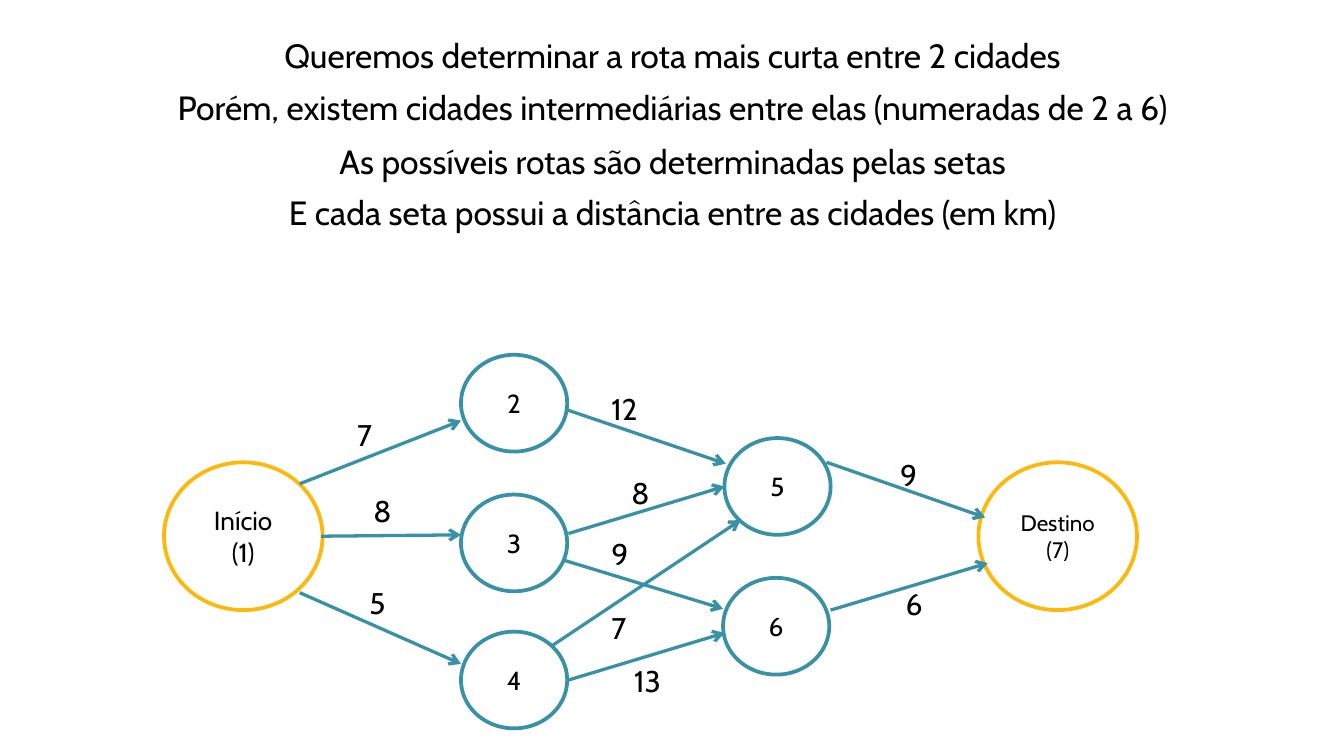
import pptx
import pptx.util
import pptx.dml.color
import pptx.enum.shapes
import pptx.enum.text
import pptx.oxml.ns
import lxml.etree
from pptx.util import Inches

FONT = "Cabin"
BLACK = "000000"
TEAL = "3891A7"
YELLOW = "FEB80A"

SENTENCES = [
    (0.21, "Queremos determinar a rota mais curta entre 2 cidades"),
    (0.6, "Porém, existem cidades intermediárias entre elas (numeradas de 2 a 6)"),
    (1, "As possíveis rotas são determinadas pelas setas"),
    (1.38, "E cada seta possui a distância entre as cidades (em km)"),
]

END_CITIES = [
    (1.22, "Início\n(1)", 14),
    (7.28, "Destino\n(7)", 12),
]

MIDDLE_CITIES = [
    ("2", 3.43, 2.64),
    ("3", 3.43, 3.68),
    ("4", 3.43, 4.7),
    ("5", 5.39, 3.26),
    ("6", 5.38, 4.3),
]

# start, end, distance, label position
ROUTES = [
    ((2.23, 3.6), (3.43, 3.13), "7", (2.56, 3.05)),
    ((2.39, 3.99), (3.43, 3.98), "8", (2.68, 3.62)),
    ((2.23, 4.41), (3.43, 4.94), "5", (2.65, 4.3)),
    ((4.22, 3.05), (5.4, 3.45), "12", (4.45, 2.86)),
    ((4.23, 3.97), (5.39, 3.62), "8", (4.6, 3.48)),
    ((4.2, 4.17), (5.38, 4.53), "9", (4.45, 3.94)),
    ((4.1, 4.81), (5.51, 3.87), "7", (4.45, 4.49)),
    ((4.23, 5.06), (5.39, 4.71), "13", (4.62, 4.88)),
    ((6.15, 3.44), (7.33, 3.85), "9", (6.6, 3.35)),
    ((6.18, 4.54), (7.35, 4.19), "6", (6.64, 4.31)),
]


def color(value):
    return pptx.dml.color.RGBColor.from_string(value)


def write_text(shape, text, size, alignment):
    text_frame = shape.text_frame
    text_frame.text = text
    text_frame.word_wrap = True
    for paragraph in text_frame.paragraphs:
        paragraph.alignment = alignment
        for run in paragraph.runs:
            run.font.name = FONT
            run.font.size = pptx.util.Pt(size)
            run.font.color.rgb = color(BLACK)


def add_text(slide, text, left, top, width, height, size, alignment):
    box = slide.shapes.add_textbox(
        Inches(left), Inches(top), Inches(width), Inches(height)
    )
    write_text(box, text, size, alignment)
    box.text_frame.auto_size = pptx.enum.text.MSO_AUTO_SIZE.SHAPE_TO_FIT_TEXT


def add_city(slide, text, left, top, width, height, outline, size):
    city = slide.shapes.add_shape(
        pptx.enum.shapes.MSO_SHAPE.OVAL,
        Inches(left), Inches(top), Inches(width), Inches(height),
    )
    city.shadow.inherit = False
    city.fill.background()
    city.line.color.rgb = color(outline)
    city.line.width = pptx.util.Pt(2)
    write_text(city, text, size, pptx.enum.text.PP_ALIGN.CENTER)
    city.text_frame.vertical_anchor = pptx.enum.text.MSO_ANCHOR.MIDDLE


def add_arrow(slide, start, end):
    arrow = slide.shapes.add_connector(
        pptx.enum.shapes.MSO_CONNECTOR.STRAIGHT,
        *[Inches(length) for length in start + end],
    )
    arrow.line.color.rgb = color(TEAL)
    arrow.line.width = pptx.util.Pt(1.75)
    qualified_name = pptx.oxml.ns.qn
    line = arrow.line._get_or_add_ln()
    lxml.etree.SubElement(line, qualified_name("a:tailEnd"), type="arrow")
    properties = arrow._element.spPr
    lxml.etree.SubElement(properties, qualified_name("a:effectLst"))


def main():
    presentation = pptx.Presentation()
    presentation.slide_width = Inches(10)
    presentation.slide_height = Inches(10) * 9 // 16
    slide = presentation.slides.add_slide(presentation.slide_layouts[6])
    alignments = pptx.enum.text.PP_ALIGN

    for top, sentence in SENTENCES:
        add_text(slide, sentence, 0.91, top, 8.19, 0.4, 18, alignments.CENTER)
    for left, name, size in END_CITIES:
        add_city(slide, name, left, 3.44, 1.18, 1.1, YELLOW, size)
    for name, left, top in MIDDLE_CITIES:
        add_city(slide, name, left, top, 0.79, 0.72, TEAL, 14)
    for start, end, distance, (left, top) in ROUTES:
        add_arrow(slide, start, end)
        width = 0.27 * len(distance)
        add_text(slide, distance, left, top, width, 0.37, 16, alignments.LEFT)

    presentation.save("out.pptx")


if __name__ == "__main__":
    main()
